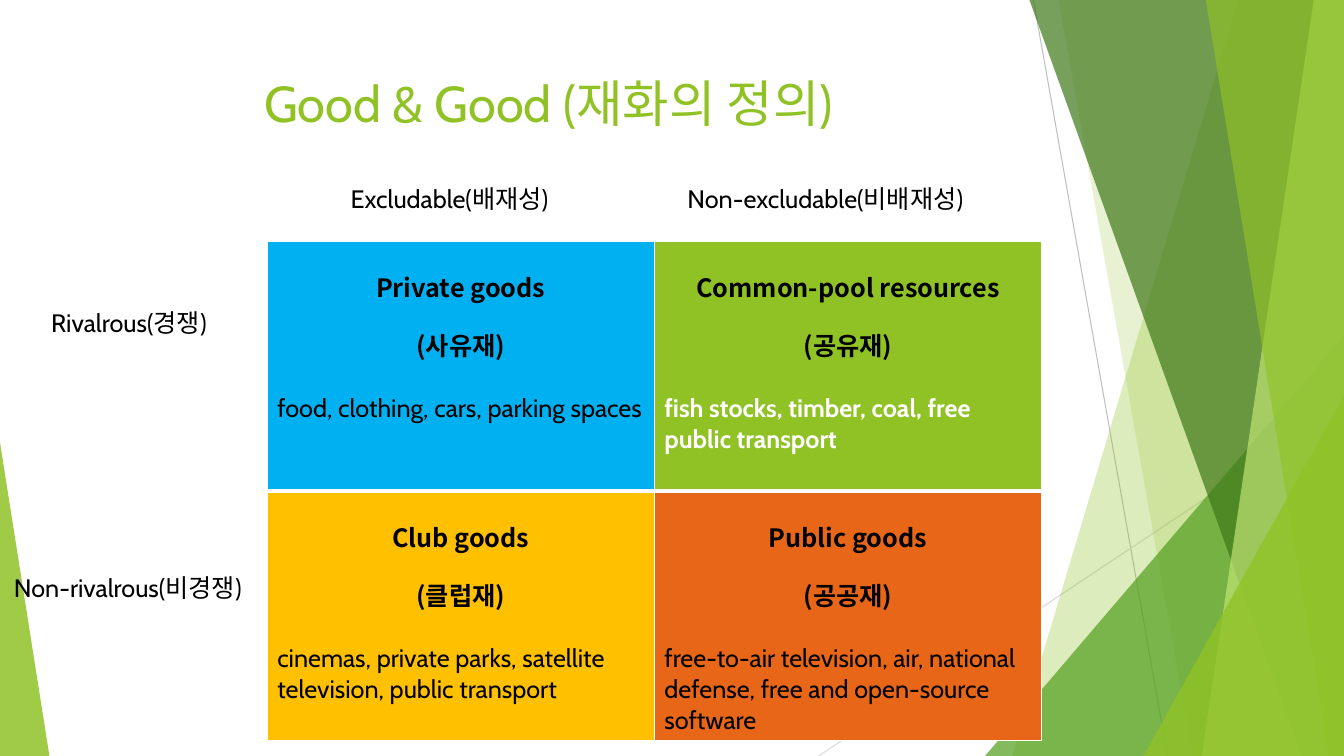
from dataclasses import dataclass

from lxml import etree
from pptx import Presentation
from pptx.dml.color import RGBColor
from pptx.enum.shapes import MSO_CONNECTOR, MSO_SHAPE
from pptx.enum.text import MSO_ANCHOR, MSO_AUTO_SIZE, PP_ALIGN
from pptx.oxml.ns import qn
from pptx.util import Inches, Pt

STRAIGHT = MSO_CONNECTOR.STRAIGHT
TRIANGLE = MSO_SHAPE.ISOSCELES_TRIANGLE
TOP = MSO_ANCHOR.TOP
CENTER = PP_ALIGN.CENTER
FIT_SHAPE = MSO_AUTO_SIZE.SHAPE_TO_FIT_TEXT


@dataclass(frozen=True)
class Theme:
    latin: str = "Cabin"
    korean: str = "Noto Sans CJK KR"
    title_size: int = 36
    text_size: int = 18
    black: str = "000000"
    white: str = "FFFFFF"
    green: str = "90C226"
    mid_green: str = "54A021"
    dark_green: str = "3F7819"
    pale_green: str = "C0E474"
    blue: str = "00B0F0"
    yellow: str = "FFC000"
    orange: str = "E76618"
    gray: str = "BFBFBF"
    light_gray: str = "D9D9D9"


theme = Theme()
WIDTH, HEIGHT = 13.33, 7.5


def add_span(para, text, color=theme.black, size=theme.text_size, font=theme.latin, bold=False):
    span = para.add_run()
    span.text = text
    span.font.size = Pt(size)
    span.font.bold = bold
    span.font.name = font
    span.font.color.rgb = RGBColor.from_string(color)
    east_asian = etree.SubElement(span.font._element, qn("a:ea"))
    east_asian.set("typeface", theme.korean)


def paint(shape, color, opacity):
    shape.shadow.inherit = False
    shape.line.fill.background()
    shape.fill.solid()
    shape.fill.fore_color.rgb = RGBColor.from_string(color)
    color_element = shape.fill._xPr.find(qn("a:solidFill"))[0]
    etree.SubElement(color_element, qn("a:alpha")).set("val", str(opacity * 1000))


deck = Presentation()
deck.slide_width, deck.slide_height = Inches(WIDTH), Inches(HEIGHT)
page = deck.slides.add_slide(deck.slide_layouts[5])

# Thin background lines
for x1, y1, x2, y2, color in [
    (10.25, 0, 11.58, HEIGHT, theme.gray),
    (WIDTH, 4.03, 8.12, HEIGHT, theme.light_gray),
]:
    line = page.shapes.add_connector(STRAIGHT, Inches(x1), Inches(y1), Inches(x2), Inches(y2))
    line.line.color.rgb = RGBColor.from_string(color)
    line.line.width = Pt(0.75)
    etree.SubElement(line._element.spPr, qn("a:effectLst"))

# Green facets: bands run from a top x and a bottom x to the right edge,
# triangles stand on the bottom edge
facets = [
    ("band", 12.28, 10.04, theme.green, 30),
    ("band", 10.5, 11.83, theme.green, 20),
    ("triangle", (9.77, 3.33, 3.56), 1, theme.mid_green, 72),
    ("band", 10.21, 12.91, theme.dark_green, 70),
    ("band", 13.03, 11.92, theme.pale_green, 70),
    ("band", 11.96, 13.18, theme.green, 65),
    ("triangle", (11.34, 3.93, 1.99), 1, theme.green, 80),
    ("triangle", (0, 4.39, 0.49), 0, theme.green, 85),
]
for kind, start, end, color, opacity in facets:
    if kind == "band":
        builder = page.shapes.build_freeform(Inches(start), 0)
        corners = [(WIDTH, 0), (WIDTH, HEIGHT), (end, HEIGHT)]
        builder.add_line_segments([(Inches(x), Inches(y)) for x, y in corners])
        facet = builder.convert_to_shape()
    else:
        left, top, width = start
        facet = page.shapes.add_shape(
            TRIANGLE, Inches(left), Inches(top), Inches(width), Inches(HEIGHT - top))
        facet.adjustments[0] = end
    paint(facet, color, opacity)

# Title
title = page.shapes.title
title.left, title.top = Inches(0.74), Inches(0.67)
title.width, title.height = Inches(9.4), Inches(0.88)
title.text_frame.vertical_anchor = TOP
title_para = title.text_frame.paragraphs[0]
title_para.alignment = CENTER
add_span(title_para, "Good & Good (재화의 정의)", theme.green, theme.title_size)

# Matrix of goods: headings, examples, example colour, bold examples, fill
goods = [
    [
        (["Private goods", "(사유재)"], "food, clothing, cars, parking spaces",
         theme.black, False, theme.blue),
        (["Common-pool resources (공유재)"], "fish stocks, timber, coal, free public transport",
         theme.white, True, theme.green),
    ],
    [
        (["Club goods", "(클럽재)"],
         "cinemas, private parks, satellite television, public transport",
         theme.black, False, theme.yellow),
        (["Public goods", "(공공재)"],
         "free-to-air television, air, national defense, free and open-source software",
         theme.black, False, theme.orange),
    ],
]
ROW_HEIGHT = 2.48
matrix = page.shapes.add_table(
    2, 2, Inches(2.65), Inches(2.39), Inches(7.68), Inches(2 * ROW_HEIGHT)).table
matrix.first_row = matrix.horz_banding = False
for row_index, row in enumerate(goods):
    matrix.rows[row_index].height = Inches(ROW_HEIGHT)
    for column_index, (headings, examples, color, bold, fill) in enumerate(row):
        cell = matrix.cell(row_index, column_index)
        properties = cell._tc.get_or_add_tcPr()
        for side in ("lnL", "lnR", "lnT", "lnB"):
            # The divider between the rows is thicker
            divider = (row_index, side) in [(0, "lnB"), (1, "lnT")]
            border = etree.SubElement(properties, qn(f"a:{side}"))
            border.set("w", str(Pt(3 if divider else 1)))
            border_fill = etree.SubElement(border, qn("a:solidFill"))
            etree.SubElement(border_fill, qn("a:srgbClr")).set("val", theme.white)
        cell.fill.solid()
        cell.fill.fore_color.rgb = RGBColor.from_string(fill)

        para = cell.text_frame.paragraphs[0]
        for heading in headings:
            para.alignment = CENTER
            para.line_spacing = 1.6
            add_span(para, heading, font=theme.korean, bold=True)
            para = cell.text_frame.add_paragraph()
        para.space_before = Pt(22)
        add_span(para, examples, color, bold=bold)

# Row and column labels
for text, left, top, width in [
    ("Excludable(배재성)", 3.38, 1.77, 2.37),
    ("Non-excludable(비배재성)", 6.72, 1.77, 3.15),
    ("Rivalrous(경쟁)", 0.41, 3, 1.92),
    ("Non-rivalrous(비경쟁)", 0.04, 5.63, 2.65),
]:
    box = page.shapes.add_textbox(Inches(left), Inches(top), Inches(width), Inches(0.4))
    box.text_frame.word_wrap = False
    box.text_frame.auto_size = FIT_SHAPE
    add_span(box.text_frame.paragraphs[0], text)

deck.save("out.pptx")
